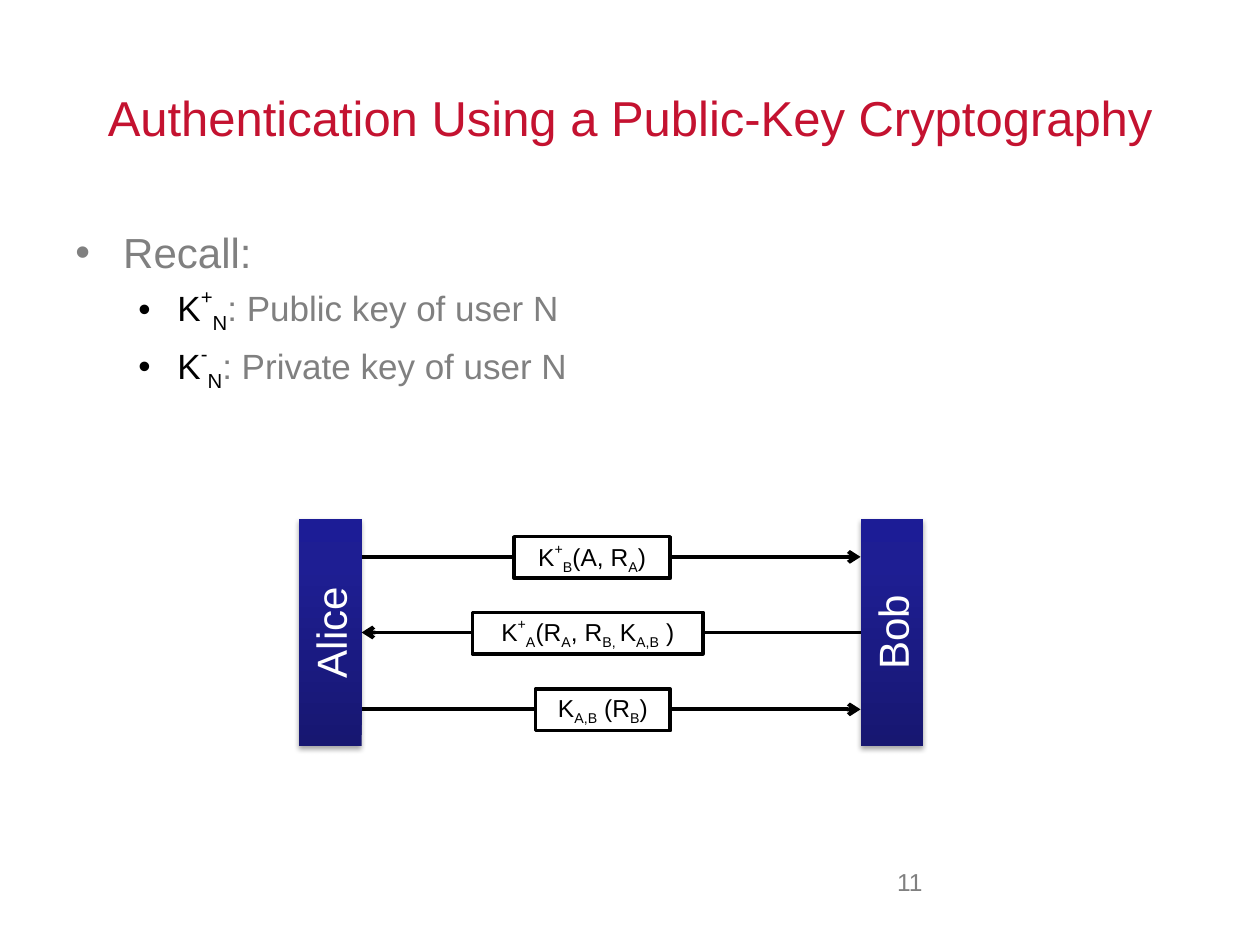
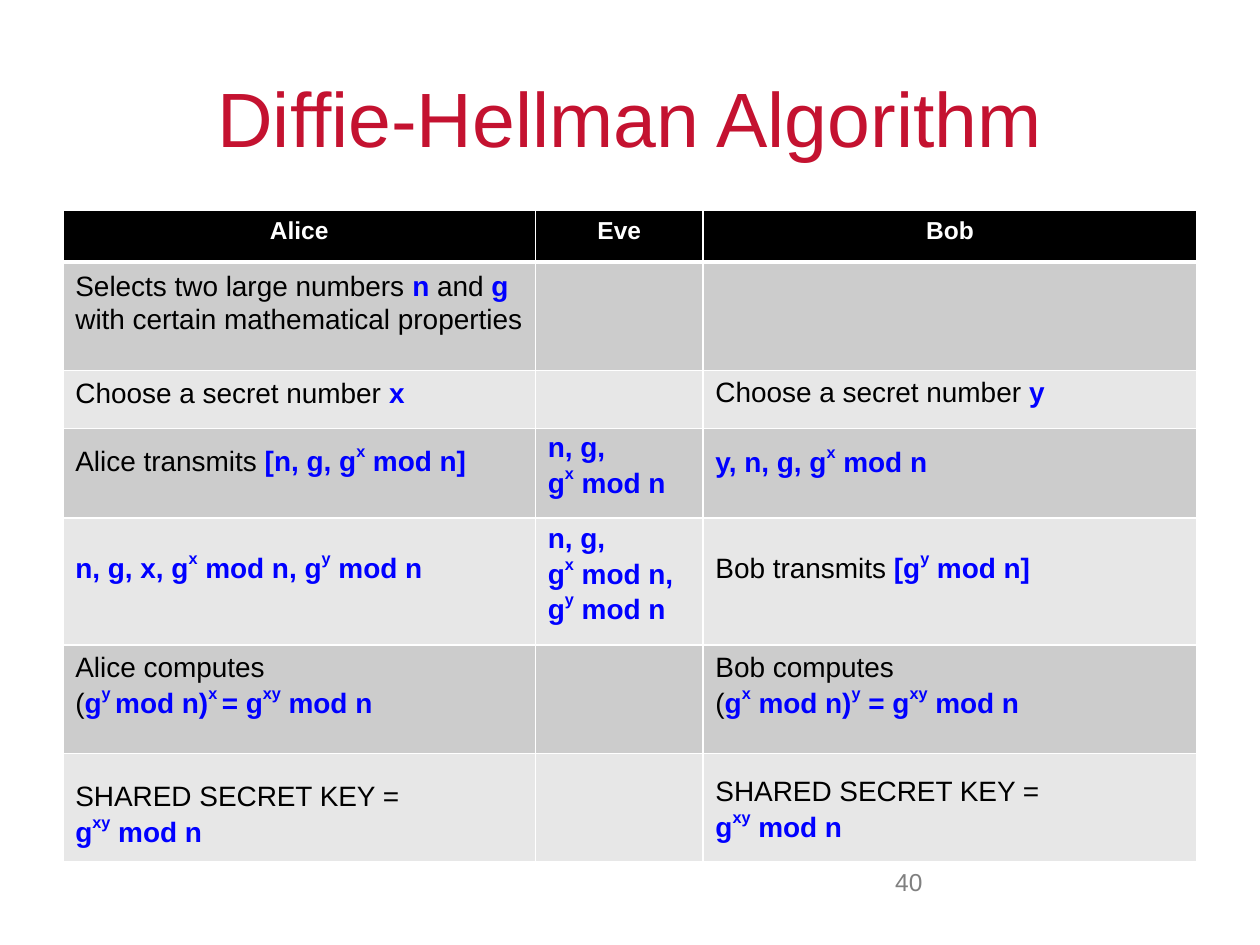
"""Build two slides on public-key authentication and key exchange."""
from copy import deepcopy
from dataclasses import dataclass

from lxml import etree
from pptx import Presentation
from pptx import util as u
from pptx.dml.color import RGBColor
from pptx.enum import shapes, text
from pptx.oxml.ns import qn

I = u.Inches


@dataclass(frozen=True)
class Theme:
    """Colours, font and type sizes shared by the slides."""
    font: str = "Arial"
    title: str = "C41230"
    grey: str = "808080"
    ink: str = "000000"
    paper: str = "FFFFFF"
    formula: str = "0000FF"
    bands: tuple = ("CCCCCC", "E7E7E7")
    post: tuple = ((0, "171771"), (0.8, "1E1E93"), (1, "1C1C96"))
    small: int = 14
    cell: int = 16
    sub_bullet: int = 20
    bullet: int = 24


T = Theme()
SHIFTS = {"^": 50000, "_": -25000}
LEFT, CENTER, RIGHT = (text.PP_ALIGN.LEFT, text.PP_ALIGN.CENTER, text.PP_ALIGN.RIGHT)


def set_all(obj, **fmt):
    """Set each format value on an object."""
    for name, value in fmt.items():
        setattr(obj, name, value)


def add_xml(parent, tag, **attrs):
    """Append a DrawingML element and return it."""
    return etree.SubElement(parent, qn("a:" + tag), attrs)


def add_run(p, words, size, color, bold=False, shift=None):
    """Add one formatted run, raised or lowered when a shift is given."""
    r = p.add_run()
    r.text = words
    set_all(r.font, name=T.font, size=u.Pt(size), bold=bold)
    r.font.color.rgb = RGBColor.from_string(color)
    if shift:
        r.font._element.set("baseline", str(shift))


def write(p, marked, size, color, accent=None, strong=False, align=LEFT):
    """Write text where ^ and _ toggle scripts and * toggles the accent."""
    p.alignment = align
    words, shift, accented = "", None, False
    for char in marked + "\0":
        if char not in "^_*\n\0":
            words += char
            continue
        if words:
            add_run(p, words, size, accent if accented else color,
                    strong and accented, SHIFTS.get(shift))
            words = ""
        if char == "\n":
            p.add_line_break()
        elif char == "*":
            accented = not accented
        elif char in SHIFTS:
            shift = None if shift else char


def add_textbox(s, box, paragraphs, size, color, **fmt):
    """Add a wrapping text box holding marked paragraphs."""
    tf = s.shapes.add_textbox(*map(I, box)).text_frame
    tf.word_wrap = True
    for i, marked in enumerate(paragraphs):
        p = tf.add_paragraph() if i else tf.paragraphs[0]
        write(p, marked, size, color, **fmt)
    return tf


def add_slide(prs, title, size, number):
    """Add a slide with its title and page number."""
    s = prs.slides.add_slide(prs.slide_layouts[5])
    sp = s.shapes.title
    set_all(sp, left=I(0.5), top=I(0.3), width=I(9), height=I(1.25))
    set_all(sp.text_frame, word_wrap=True, auto_size=text.MSO_AUTO_SIZE.NONE,
            vertical_anchor=text.MSO_ANCHOR.MIDDLE)
    write(sp.text_frame.paragraphs[0], title, size, T.title, align=CENTER)
    add_textbox(s, (6.5, 6.83, 0.92, 0.52), [number], T.small, T.grey, align=RIGHT)
    return s


def add_bullets(s, box, items):
    """Add a bulleted list of (level, marked text) items."""
    tf = add_textbox(s, box, [], T.bullet, T.grey)
    sizes, indents = (T.bullet, T.sub_bullet), ((0.38, -0.38), (0.81, -0.31))
    for i, (level, marked) in enumerate(items):
        p = tf.add_paragraph() if i else tf.paragraphs[0]
        p.level = level
        if i:
            p.space_before = u.Pt(sizes[level] * 0.2)
        pPr = p._p.get_or_add_pPr()
        for name, value in zip(("marL", "indent"), indents[level]):
            pPr.set(name, str(I(value)))
        add_xml(pPr, "buFont", typeface=T.font)
        add_xml(pPr, "buChar", char="•")
        write(p, marked, sizes[level], T.grey, accent=T.ink)


def add_rect(s, box, label, size, color):
    """Add a rectangle with a centred label."""
    sp = s.shapes.add_shape(shapes.MSO_SHAPE.RECTANGLE, *map(I, box))
    sp.shadow.inherit = False
    sp.text_frame.vertical_anchor = text.MSO_ANCHOR.MIDDLE
    write(sp.text_frame.paragraphs[0], label, size, color, align=CENTER)
    return sp


def add_post(s, box, name):
    """Add a shaded party post with its name turned upwards."""
    sp = add_rect(s, box, name, T.bullet, T.paper)
    sp.line.fill.background()
    sp.fill.gradient()
    sp.fill.gradient_angle = 90
    spPr = sp._element.spPr
    stops = spPr.find(qn("a:gradFill")).find(qn("a:gsLst"))
    stops.append(deepcopy(stops[-1]))
    for stop, (position, color) in zip(sp.fill.gradient_stops, T.post):
        stop.position = position
        stop.color.rgb = RGBColor.from_string(color)
    shadow = add_xml(spPr.find(qn("a:effectLst")), "outerShdw", blurRad=str(u.Pt(3.1)),
                     dist=str(u.Pt(1.8)), dir="5400000", rotWithShape="0")
    add_xml(add_xml(shadow, "srgbClr", val=T.ink), "alpha", val="35000")
    sp.text_frame._txBody.bodyPr.set("vert", "vert270")
    return sp


def add_arrow(s, start, end, y):
    """Add a horizontal arrow and return it."""
    cx = s.shapes.add_connector(shapes.MSO_CONNECTOR.STRAIGHT, I(start), I(y), I(end), I(y))
    cx.line.width = u.Pt(2.25)
    cx.line.color.rgb = RGBColor.from_string(T.ink)
    add_xml(cx.line._get_or_add_ln(), "tailEnd", type="arrow")
    add_xml(cx._element.spPr, "effectLst")
    return cx


def add_exchange(s, box, messages):
    """Draw two posts and the messages passed between them."""
    left, top, width, height = box
    post = 0.5
    near, far = left + post, left + width - post
    alice = add_post(s, (left, top, post, height), "Alice")
    bob = add_post(s, (far, top, post, height), "Bob")
    for forward, dy, dx, label_width, label in messages:
        y = top + dy
        cx = add_arrow(s, *((near, far) if forward else (far, near)), y)
        if dy == height / 2:
            cx.begin_connect(*((alice, 3) if forward else (bob, 1)))
            cx.end_connect(*((bob, 1) if forward else (alice, 3)))
        sp = add_rect(s, (left + dx, y - 0.16, label_width, 0.33), label, T.small, T.ink)
        sp.fill.solid()
        sp.fill.fore_color.rgb = RGBColor.from_string(T.paper)
        sp.line.width = u.Pt(2)
        sp.line.color.rgb = RGBColor.from_string(T.ink)


def paint_cell(cell, color, top, bottom):
    """Fill a cell and give it white borders."""
    cell.fill.solid()
    cell.fill.fore_color.rgb = RGBColor.from_string(color)
    tcPr = cell._tc.get_or_add_tcPr()
    for i, (side, width) in enumerate(zip("LRTB", (1, 1, top, bottom))):
        ln = add_xml(tcPr, "ln" + side, w=str(u.Pt(width)))
        add_xml(add_xml(ln, "solidFill"), "srgbClr", val=T.paper)
        tcPr.insert(i, ln)


def add_key_table(s, box, heads, widths, heights, notes):
    """Add the banded party table and the notes placed over its columns."""
    left, top = box[:2]
    table = s.shapes.add_table(len(heights), len(widths), *map(I, box)).table
    table.horz_banding = False
    for col, width in zip(table.columns, widths):
        col.width = I(width)
    for i, (row, height) in enumerate(zip(table.rows, heights)):
        row.height = I(height)
        for cell in row.cells:
            paint_cell(cell, T.bands[(i - 1) % 2] if i else T.ink,
                       3 if i == 1 else 1, 1 if i else 3)
    for cell, head in zip(table.rows[0].cells, heads):
        write(cell.text_frame.paragraphs[0], f"*{head}", T.small, T.paper,
              accent=T.paper, strong=True, align=CENTER)
    for col, dy, height, *paragraphs in notes:
        note_width = 1.25 if col == 1 else 3.92
        add_textbox(s, (left + sum(widths[:col]), top + dy, note_width, height),
                    paragraphs, T.cell, T.ink, accent=T.formula, strong=True)


def authentication_slide(prs):
    """Build the public-key authentication slide."""
    s = add_slide(prs, "Authentication Using a Public-Key Cryptography", 28, "11")
    add_bullets(s, (0.5, 1.75, 9, 4.95), [
        (0, "Recall:"),
        (1, "*K^+^_N_*: Public key of user N"),
        (1, "*K^-^_N_*: Private key of user N"),
    ])
    add_exchange(s, (2.37, 4.12, 4.96, 1.8), [
        (True, 0.3, 1.71, 1.24, "K^+^_B_(A, R_A_)"),
        (False, 0.9, 1.38, 1.83, "K^+^_A_(R_A_, R_B, _K_A,B_ )"),
        (True, 1.51, 1.88, 1.07, "K_A,B_ (R_B_)"),
    ])


def diffie_hellman_slide(prs):
    """Build the key-exchange table slide."""
    s = add_slide(prs, "Diffie-Hellman Algorithm", 44, "40")
    secret = "SHARED SECRET KEY = \n*g^xy^ mod n"
    add_key_table(
        s, (0.5, 1.67, 9, 5.17), ("Alice", "Eve", "Bob"), (3.75, 1.33, 3.92),
        (0.41, 0.86, 0.46, 0.71, 1.01, 0.86, 0.86), [
            (0, 0.41, 0.64, "Selects two large numbers *n* and *g*"
                            " with certain mathematical properties"),
            (0, 1.26, 0.37, "Choose a secret number *x"),
            (2, 1.25, 0.37, "Choose a secret number *y"),
            (0, 1.78, 0.37, "Alice transmits *[n, g, g^x^ mod n]"),
            (1, 1.69, 0.64, "*n, g, \ng^x^ mod n"),
            (2, 1.79, 0.37, "*y, n, g, g^x^ mod n"),
            (0, 2.63, 0.37, "*n, g, x, g^x^ mod n, g^y^ mod n"),
            (1, 2.41, 0.91, "*n, g, \ng^x^ mod n,", "*g^y^ mod n"),
            (2, 2.63, 0.37, "Bob transmits *[g^y^ mod n]"),
            (0, 3.44, 0.64, "Alice computes \n(*g^y ^mod n)^x ^= g^xy^ mod n"),
            (2, 3.44, 0.64, "Bob computes \n(*g^x^ mod n)^y^ = g^xy^ mod n"),
            (0, 4.46, 0.64, secret),
            (2, 4.42, 0.64, secret),
        ])


def main():
    """Build and save the presentation."""
    prs = Presentation()
    set_all(prs, slide_width=I(10), slide_height=I(7.5))
    authentication_slide(prs)
    diffie_hellman_slide(prs)
    prs.save("out.pptx")


if __name__ == "__main__":
    main()
